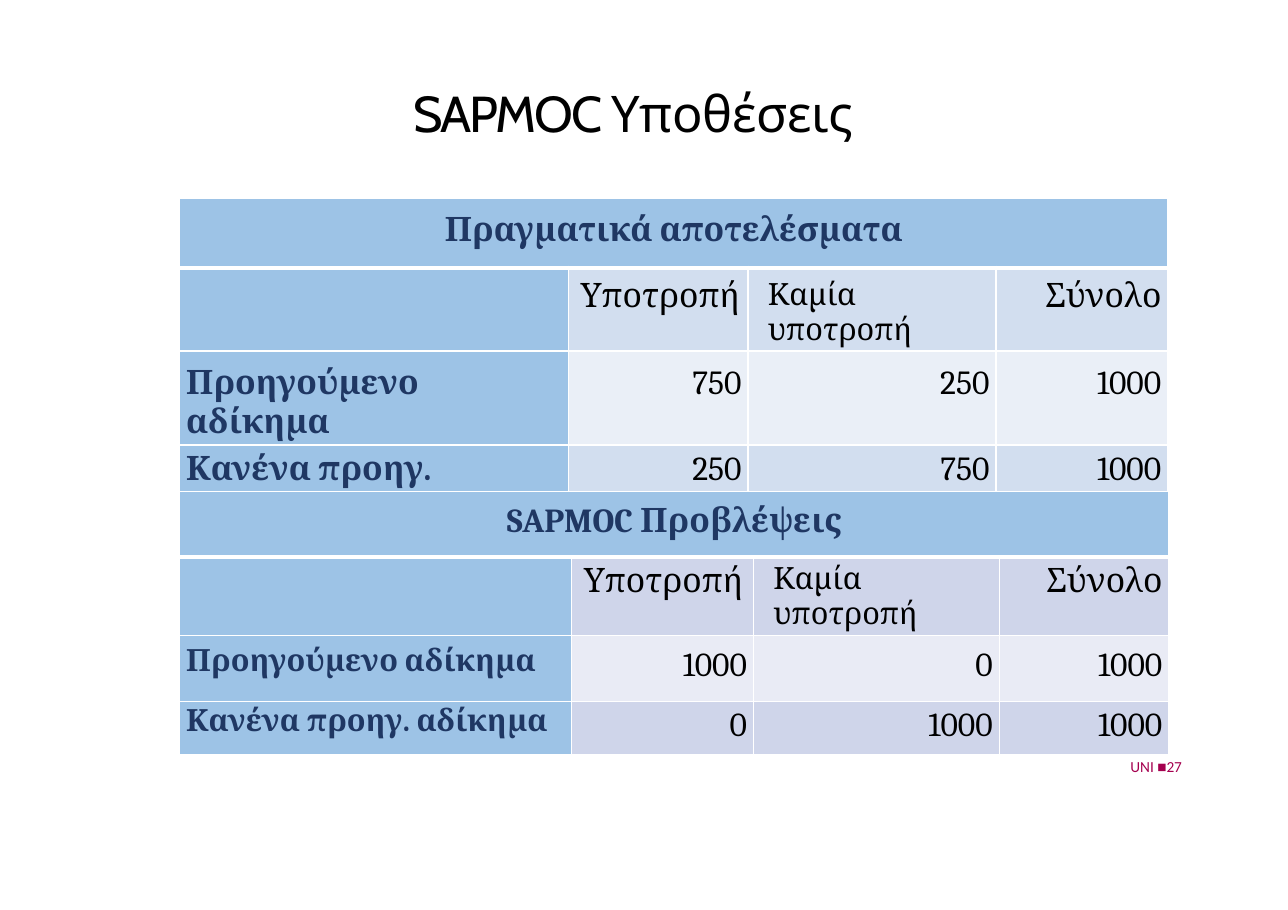
from lxml.etree import SubElement
from pptx import Presentation
from pptx.dml.color import RGBColor
from pptx.enum.text import MSO_ANCHOR, PP_ALIGN
from pptx.oxml.ns import qn
from pptx.util import Inches, Pt

BLUE = RGBColor(0x9D, 0xC3, 0xE6)
NAVY = RGBColor(0x1F, 0x37, 0x63)
BLACK = RGBColor(0, 0, 0)
PURPLE = RGBColor(0xA5, 0x00, 0x4F)
WHITE = RGBColor(0xFF, 0xFF, 0xFF)
SKY_DARK, SKY_LIGHT = RGBColor(0xD2, 0xDE, 0xEF), RGBColor(0xEA, 0xEF, 0xF7)
LILAC_DARK, LILAC_LIGHT = RGBColor(0xCF, 0xD5, 0xEA), RGBColor(0xE9, 0xEB, 0xF5)

HEADINGS = ["Υποτροπή", "Καμία υποτροπή", "Σύνολο"]
LABELS = ["Προηγούμενο αδίκημα", "Κανένα προηγ. αδίκημα"]


def style_run(r, name, size, color, bold=False):
    """Set the font of a run."""
    r.font.name = name
    r.font.size = Pt(size)
    r.font.color.rgb = color
    r.font.bold = bold


def set_frame(tf, top):
    """Set the insets of a text frame and anchor it at the top."""
    tf.margin_left = tf.margin_right = tf.margin_bottom = 0
    tf.margin_top = Inches(top)
    tf.vertical_anchor = MSO_ANCHOR.TOP
    tf.word_wrap = True


def format_cell(cell, fill, heavy):
    """Clear the insets, draw white borders and fill a cell."""
    cell.margin_left = cell.margin_right = cell.margin_top = cell.margin_bottom = 0
    tcPr = cell._tc.get_or_add_tcPr()
    for side in "LRTB":
        width = Pt(3 if side == heavy else 1)
        ln = SubElement(tcPr, qn(f"a:ln{side}"), w=str(width))
        color = SubElement(ln, qn("a:solidFill"))
        SubElement(color, qn("a:srgbClr"), val=str(WHITE))
    cell.fill.solid()
    cell.fill.fore_color.rgb = fill


def write_cell(cell, text, size, top, color=BLACK, left=0, right=0, align=PP_ALIGN.LEFT):
    """Write one line of text into a cell; navy text is bold."""
    cell.margin_left, cell.margin_right = Inches(left), Inches(right)
    cell.margin_top = Inches(top)
    p = cell.text_frame.paragraphs[0]
    p.text = text
    p.alignment = align
    style_run(p.runs[0], "Cambria", size, color, color == NAVY)


def add_title(s, x, y, w, h):
    """Place and format the title placeholder."""
    title = s.shapes.title
    title.left, title.top, title.width, title.height = map(Inches, (x, y, w, h))
    tf = title.text_frame
    set_frame(tf, 0.02)
    p = tf.paragraphs[0]
    p.alignment = PP_ALIGN.LEFT
    for text, spacing in (("SAPMOC ", -140), ("Υποθέσεις", -20)):
        r = p.add_run()
        r.text = text
        style_run(r, "Cabin", 33, BLACK)
        r._r.get_or_add_rPr().set("spc", str(spacing))


def add_results(s, x, y, cols, rows, tops, caption, values, dark, light,
                label_size, label_lift, total_left):
    """Add a captioned table of outcomes by prior offence."""
    frame = s.shapes.add_table(len(rows), len(cols), Inches(x), Inches(y),
                               Inches(sum(cols)), Inches(sum(rows)))
    table = frame.table
    table.first_row = table.horz_banding = False
    for column, width in zip(table.columns, cols):
        column.width = Inches(width)
    for i, height in enumerate(rows):
        table.rows[i].height = Inches(height)
        for j in range(len(cols)):
            fill = BLUE if i == 0 or j == 0 else light if i == 2 else dark
            format_cell(table.cell(i, j), fill, {0: "B", 1: "T"}.get(i))

    table.cell(0, 0).merge(table.cell(0, len(cols) - 1))
    write_cell(table.cell(0, 0), caption, 22, tops[0], NAVY, align=PP_ALIGN.CENTER)
    heads = zip(HEADINGS, (22, 20, 22), (0.11, 0.18, total_left))
    for j, (text, size, left) in enumerate(heads, 1):
        write_cell(table.cell(1, j), text, size, tops[1], left=left)
    for i, (label, numbers) in enumerate(zip(LABELS, values), 2):
        write_cell(table.cell(i, 0), label, label_size, tops[i] - label_lift, NAVY, left=0.06)
        for j, number in enumerate(numbers, 1):
            write_cell(table.cell(i, j), str(number), 22, tops[i],
                       right=0.06, align=PP_ALIGN.RIGHT)


def add_footer(s, x, y, w, h):
    """Add the footer with the page number."""
    tf = s.shapes.add_textbox(*map(Inches, (x, y, w, h))).text_frame
    set_frame(tf, 0.01)
    tf.margin_left = Inches(0.01)
    tf.word_wrap = False
    for text, name in (("UNI ", "Calibri"), ("■", "Arial"), ("27", "Calibri")):
        r = tf.paragraphs[0].add_run()
        r.text = text
        style_run(r, name, 10, PURPLE)


def main():
    """Build and save the slide."""
    prs = Presentation()
    prs.slide_width, prs.slide_height = Inches(11.69), Inches(8.26)
    s = prs.slides.add_slide(prs.slide_layouts[5])
    add_footer(s, 10.25, 6.86, 0.48, 0.19)
    add_title(s, 3.75, 0.72, 4.19, 0.58)
    add_results(s, 1.63, 1.8, (3.53, 1.63, 2.25, 1.56), (0.63, 0.57, 0.63, 0.5),
                (0.12, 0.09, 0.12, 0.05), "Πραγματικά αποτελέσματα",
                ((750, 250, 1000), (250, 750, 1000)), SKY_DARK, SKY_LIGHT, 22, 0, 0.45)
    add_results(s, 1.63, 4.46, (3.56, 1.65, 2.23, 1.54), (0.6, 0.48, 0.6, 0.48),
                (0.1, 0.04, 0.1, 0.04), "SAPMOC Προβλέψεις",
                ((1000, 0, 1000), (0, 1000, 1000)), LILAC_DARK, LILAC_LIGHT, 20, 0.02, 0.43)
    prs.save("out.pptx")


if __name__ == "__main__":
    main()
